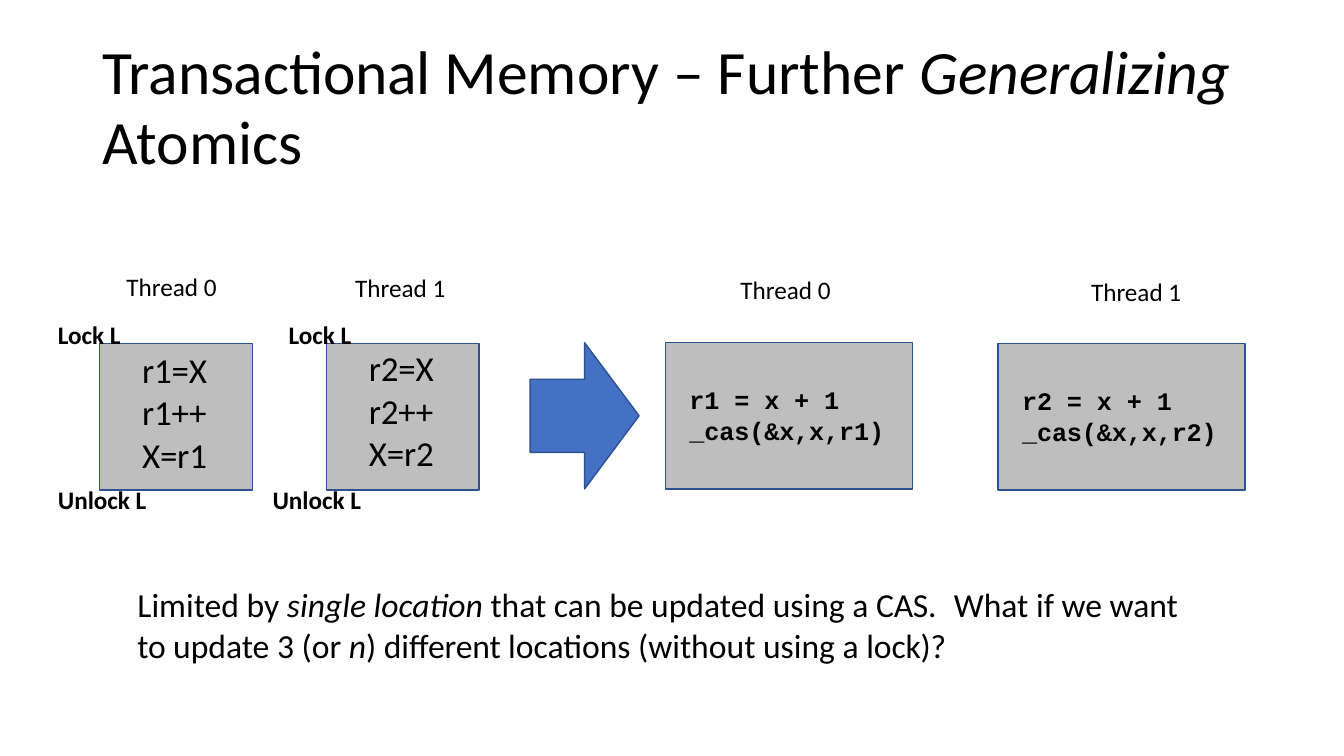
from dataclasses import dataclass

from pptx import Presentation
from pptx.dml import color
from pptx.enum import shapes, text
from pptx.util import Pt

BLACK, GREY, BLUE, NAVY = "000000", "BEBEBE", "4471C4", "2E528F"
SANS, MONO = "Calibri", "Courier New"


@dataclass
class Run:
    words: str
    slant: bool = False
    gap: float = 0


@dataclass
class Style:
    size: float
    font: str = SANS
    bold: bool = False
    lead: float | Pt | None = None
    above: float = 0


@dataclass
class Label:
    left: float
    top: float
    width: float
    words: str
    bold: bool = False


@dataclass
class Block:
    left: float
    top: float
    width: float
    inset: tuple[float, float]
    style: Style
    lines: list[str]


def tint(code: str) -> color.RGBColor:
    return color.RGBColor.from_string(code)


def write(shape, lines: list[list[Run]], style: Style, left: float, top: float) -> None:
    """Fill a shape with one paragraph per line, set in from its left and top edges."""
    frame = shape.text_frame
    frame.word_wrap = True
    frame.vertical_anchor = text.MSO_ANCHOR.TOP
    frame.margin_left, frame.margin_top = Pt(left), Pt(top)
    frame.margin_right = frame.margin_bottom = 0
    for i, line in enumerate(lines):
        para = frame.add_paragraph() if i else frame.paragraphs[0]
        para.alignment = text.PP_ALIGN.LEFT
        para.space_before = Pt(style.above if i else 0)
        if style.lead:
            para.line_spacing = style.lead
        for part in line:
            run = para.add_run()
            run.text = part.words
            font = run.font
            font.name, font.size = style.font, Pt(style.size)
            font.bold, font.italic = style.bold, part.slant
            font.color.rgb = tint(BLACK)
            if part.gap:
                run._r.get_or_add_rPr().set("spc", str(round(part.gap * 100)))


def box(slide, left: float, top: float, width: float, height: float):
    return slide.shapes.add_textbox(Pt(left), Pt(top), Pt(width), Pt(height))


def solid(slide, kind, left: float, top: float, width: float, height: float, fill: str):
    shape = slide.shapes.add_shape(kind, Pt(left), Pt(top), Pt(width), Pt(height))
    shape.shadow.inherit = False
    shape.fill.solid()
    shape.fill.fore_color.rgb = tint(fill)
    shape.line.color.rgb = tint(NAVY)
    shape.line.width = Pt(1)
    return shape


TITLE = [
    [Run("Transactional ", gap=-0.2), Run("Memory – Further "),
     Run("Generalizing", slant=True, gap=-0.1)],
    [Run("Atomics", gap=-0.1)],
]
LIMIT = [[
    Run("Limited by "), Run("single location ", slant=True),
    Run("that can be updated using a "), Run("CAS.", gap=-0.2),
    Run("\tWhat if we want "), Run("to ", gap=-0.2), Run("update 3 (or "),
    Run("n", slant=True), Run(") "), Run("different ", gap=-0.1),
    Run("locations (without using a "), Run("lock)?", gap=-0.1),
]]
LOCKED = Style(25, lead=1.01)
CODE = Style(18, MONO, bold=True, above=0.5)
BLOCKS = [
    Block(71.3, 245.5, 108.9, (30.2, 3), LOCKED, ["r1=X r1++ X=r1"]),
    Block(233.3, 245.5, 108.9, (30.2, 2), LOCKED, ["r2=X r2++ X=r2"]),
    Block(475.2, 244.8, 176.6, (17.3, 30), CODE, ["r1 = x + 1", "_cas(&x,x,r1)"]),
    Block(712.8, 245.5, 176.6, (17.3, 30), CODE, ["r2 = x + 1", "_cas(&x,x,r2)"]),
]
LABELS = [
    Label(89.3, 191.5, 70, "Thread 0"),
    Label(252.7, 192.2, 70, "Thread 1"),
    Label(527.8, 193.7, 70, "Thread 0"),
    Label(778.3, 195.1, 70, "Thread 1"),
    Label(40.3, 226.1, 50, "Lock L", True),
    Label(205.2, 226.1, 50, "Lock L", True),
    Label(40.3, 344.2, 68, "Unlock L", True),
    Label(193.7, 344.2, 68, "Unlock L", True),
]


def main() -> None:
    deck = Presentation()
    deck.slide_width, deck.slide_height = Pt(960), Pt(540)
    slide = deck.slides.add_slide(deck.slide_layouts[6])

    title = box(slide, 11.5, 7.9, 937.4, 120.5)
    write(title, TITLE, Style(44, lead=Pt(50.1)), 62, 18.3)

    for block in BLOCKS:
        rect = solid(slide, shapes.MSO_SHAPE.RECTANGLE, block.left, block.top,
                     block.width, 104.4, GREY)
        write(rect, [[Run(line, gap=-0.1)] for line in block.lines],
              block.style, *block.inset)
    for label in LABELS:
        note = box(slide, label.left, label.top, label.width, 23.8)
        write(note, [[Run(label.words)]], Style(18, bold=label.bold), 1, 2)

    solid(slide, shapes.MSO_SHAPE.RIGHT_ARROW, 378.7, 244.8, 77.8, 104.4, BLUE)

    limit = box(slide, 97.2, 415.4, 763, 59.8)
    write(limit, LIMIT, Style(24), 1, 2)
    props = limit.text_frame.paragraphs[0]._p.get_or_add_pPr()
    tabs = props.makeelement(props.tag.replace("pPr", "tabLst"), {})
    tabs.append(tabs.makeelement(props.tag.replace("pPr", "tab"),
                                 {"pos": str(Pt(583.2)), "algn": "l"}))
    props.append(tabs)

    deck.save("out.pptx")


if __name__ == "__main__":
    main()
